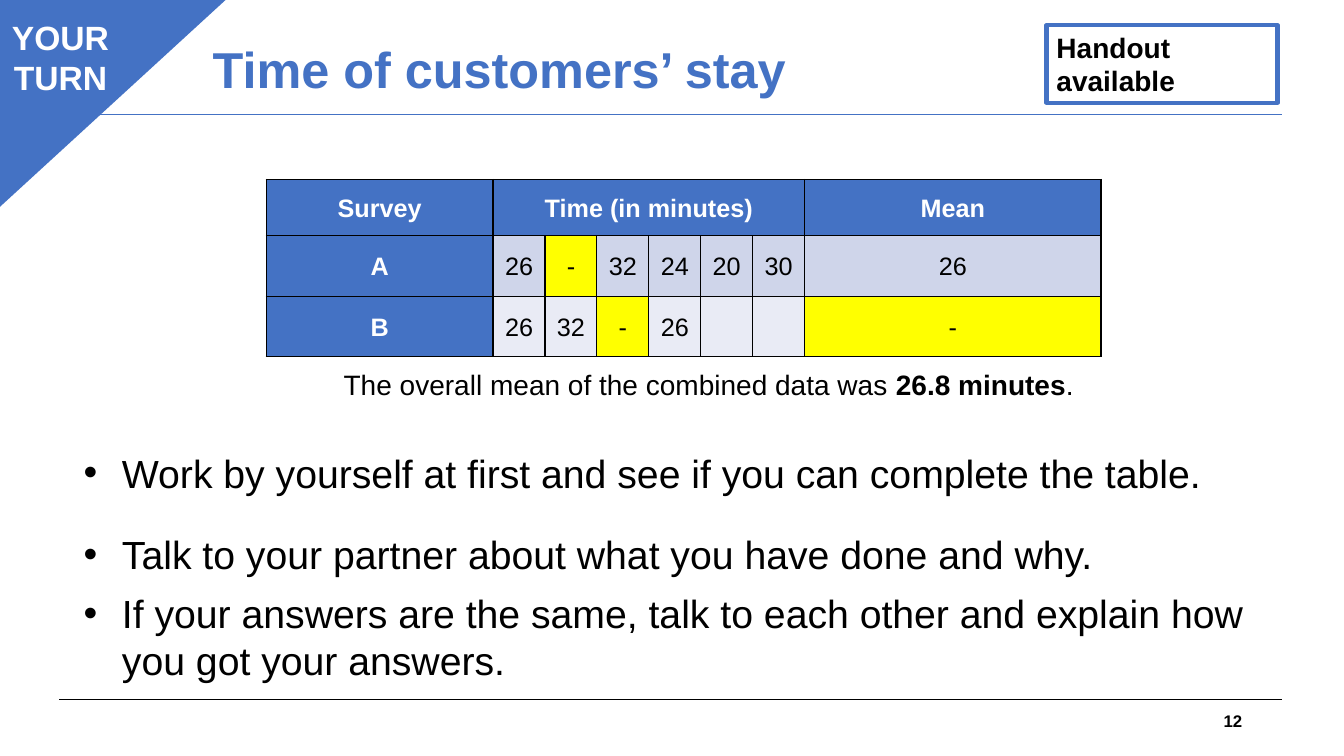
from dataclasses import dataclass

import pptx
import pptx.dml.color
import pptx.enum.shapes
import pptx.enum.text
import pptx.oxml
import pptx.oxml.ns
import pptx.util

Inches = pptx.util.Inches
Pt = pptx.util.Pt
RGBColor = pptx.dml.color.RGBColor
Align = pptx.enum.text.PP_ALIGN
Anchor = pptx.enum.text.MSO_ANCHOR
Shape = pptx.enum.shapes.MSO_SHAPE

BLUE = RGBColor(0x44, 0x72, 0xC4)
BLACK = RGBColor(0, 0, 0)
WHITE = RGBColor(255, 255, 255)
YELLOW = RGBColor(255, 255, 0)
BAND_A = RGBColor(0xCF, 0xD5, 0xEA)
BAND_B = RGBColor(0xE9, 0xEB, 0xF5)


@dataclass
class Rule:
    y: float
    color: RGBColor


@dataclass
class Survey:
    name: str
    values: list[str]
    band: RGBColor


@dataclass
class Task:
    text: str
    spacing: float


RULES = [Rule(6.94, BLACK), Rule(1.14, BLUE)]
SURVEYS = [
    Survey("A", ["26", "-", "32", "24", "20", "30", "26"], BAND_A),
    Survey("B", ["26", "32", "-", "26", "", "", "-"], BAND_B),
]
TASKS = [
    Task("Work by yourself at first and see if you can complete the table.", 1.5),
    Task("Talk to your partner about what you have done and why.", 1.5),
    Task("If your answers are the same, talk to each other and explain how "
         "you got your answers.", 1),
]


def write(p, text: str, size: float, color: RGBColor = BLACK, bold: bool = False,
          align: Align = Align.LEFT, spacing: float = 1) -> None:
    p.alignment = align
    p.line_spacing = spacing
    for i, line in enumerate(text.split("\n")):
        if i:
            p.add_line_break()
        r = p.add_run()
        r.text = line
        r.font.name = "Arial"
        r.font.size = Pt(size)
        r.font.bold = bold
        r.font.color.rgb = color


def place(sp, left: float, top: float, width: float, height: float) -> None:
    sp.left, sp.top = Inches(left), Inches(top)
    sp.width, sp.height = Inches(width), Inches(height)


def add_rule(slide, rule: Rule) -> None:
    y = Inches(rule.y)
    line = slide.shapes.add_connector(
        pptx.enum.shapes.MSO_CONNECTOR.STRAIGHT, Inches(0.59), y, Inches(12.72), y)
    line.line.color.rgb = rule.color
    line.line.width = Pt(0.75)
    line.element.spPr.append(pptx.oxml.parse_xml(
        f'<a:effectLst {pptx.oxml.ns.nsdecls("a")}/>'))


def add_box(slide, kind: Shape, left: float, top: float, width: float, height: float,
            line_width: float, filled: bool = True):
    sp = slide.shapes.add_shape(
        kind, Inches(left), Inches(top), Inches(width), Inches(height))
    sp.shadow.inherit = False
    if filled:
        sp.fill.solid()
        sp.fill.fore_color.rgb = BLUE
    else:
        sp.fill.background()
    sp.line.color.rgb = BLUE
    sp.line.width = Pt(line_width)
    sp.text_frame.vertical_anchor = Anchor.TOP
    return sp


def add_text(slide, left: float, top: float, width: float, height: float):
    sp = slide.shapes.add_textbox(
        Inches(left), Inches(top), Inches(width), Inches(height))
    sp.text_frame.word_wrap = True
    return sp.text_frame


def fill_cell(cell, text: str, fill: RGBColor, header: bool = False) -> None:
    cell.fill.solid()
    cell.fill.fore_color.rgb = fill
    cell.vertical_anchor = Anchor.MIDDLE
    cell.margin_left = cell.margin_right = Inches(0.01)
    cell.margin_top = cell.margin_bottom = Inches(0.01)
    write(cell.text_frame.paragraphs[0], text, 18, WHITE if header else BLACK,
          bold=header, align=Align.CENTER, spacing=1.07)
    tc_pr = cell._tc.get_or_add_tcPr()
    for i, side in enumerate(("lnL", "lnR", "lnT", "lnB")):
        tc_pr.insert(i, pptx.oxml.parse_xml(
            f'<a:{side} {pptx.oxml.ns.nsdecls("a")} w="{Pt(1)}"><a:solidFill>'
            f'<a:srgbClr val="{BLACK}"/></a:solidFill></a:{side}>'))


def add_survey_table(slide) -> None:
    table = slide.shapes.add_table(
        3, 8, Inches(2.64), Inches(1.78), Inches(8.28), Inches(1.76)).table
    for column, width in zip(table.columns, [2.25] + [3.09 / 6] * 6 + [2.94]):
        column.width = Inches(width)
    for row, height in zip(table.rows, [0.56, 0.6, 0.6]):
        row.height = Inches(height)
    headings = ["Survey", "Time (in minutes)"] + [""] * 5 + ["Mean"]
    for col, heading in enumerate(headings):
        fill_cell(table.cell(0, col), heading, BLUE, header=True)
    table.cell(0, 1).merge(table.cell(0, 6))
    for row, survey in enumerate(SURVEYS, 1):
        fill_cell(table.cell(row, 0), survey.name, BLUE, header=True)
        for col, value in enumerate(survey.values, 1):
            fill_cell(table.cell(row, col), value, YELLOW if value == "-" else survey.band)


def add_tasks(body) -> None:
    place(body, 0.73, 4.17, 12.42, 2.68)
    tf = body.text_frame
    tf.auto_size = pptx.enum.text.MSO_AUTO_SIZE.NONE
    for i, task in enumerate(TASKS):
        p = tf.add_paragraph() if i else tf.paragraphs[0]
        write(p, task.text, 28, spacing=task.spacing)
        p.space_before = Pt(0)
        p.space_after = Pt(8)
        p_pr = p._p.get_or_add_pPr()
        p_pr.set("marL", str(Inches(0.38)))
        p_pr.set("indent", str(Inches(-0.38)))


def main() -> None:
    prs = pptx.Presentation()
    prs.slide_width, prs.slide_height = Inches(13.33), Inches(7.5)
    slide = prs.slides.add_slide(prs.slide_layouts[1])

    for rule in RULES:
        add_rule(slide, rule)
    tf = add_text(slide, 9.42, 6.95, 3, 0.4)
    tf.vertical_anchor = Anchor.MIDDLE
    write(tf.paragraphs[0], "12", 12, bold=True, align=Align.RIGHT)

    corner = add_box(slide, Shape.ISOSCELES_TRIANGLE, -0.03, -0.03, 2.29, 2.1, 1)
    corner.adjustments[0] = 0
    corner.element.spPr.get_or_add_xfrm().set("flipV", "1")
    tf = add_box(slide, Shape.RECTANGLE, 0.01, 0.12, 1.18, 0.83, 0.75).text_frame
    write(tf.paragraphs[0], "YOUR", 24, WHITE, bold=True, align=Align.CENTER)
    write(tf.add_paragraph(), "TURN", 24, WHITE, bold=True, align=Align.CENTER)
    handout = add_box(slide, Shape.RECTANGLE, 10.38, 0.25, 2.29, 0.77, 3, filled=False)
    write(handout.text_frame.paragraphs[0], "Handout\navailable", 20, bold=True)

    title = slide.shapes.title
    place(title, 2.01, 0.4, 7.69, 1.45)
    title.text_frame.vertical_anchor = Anchor.TOP
    write(title.text_frame.paragraphs[0], "Time of customers’ stay", 36, BLUE,
          bold=True, spacing=0.9)

    add_survey_table(slide)
    add_tasks(slide.placeholders[1])
    p = add_text(slide, 3.31, 3.6, 7.61, 0.44).paragraphs[0]
    write(p, "The overall mean of the combined data was ", 20)
    write(p, "26.8 minutes", 20, bold=True)
    write(p, ".", 20)

    prs.save("out.pptx")


if __name__ == "__main__":
    main()
